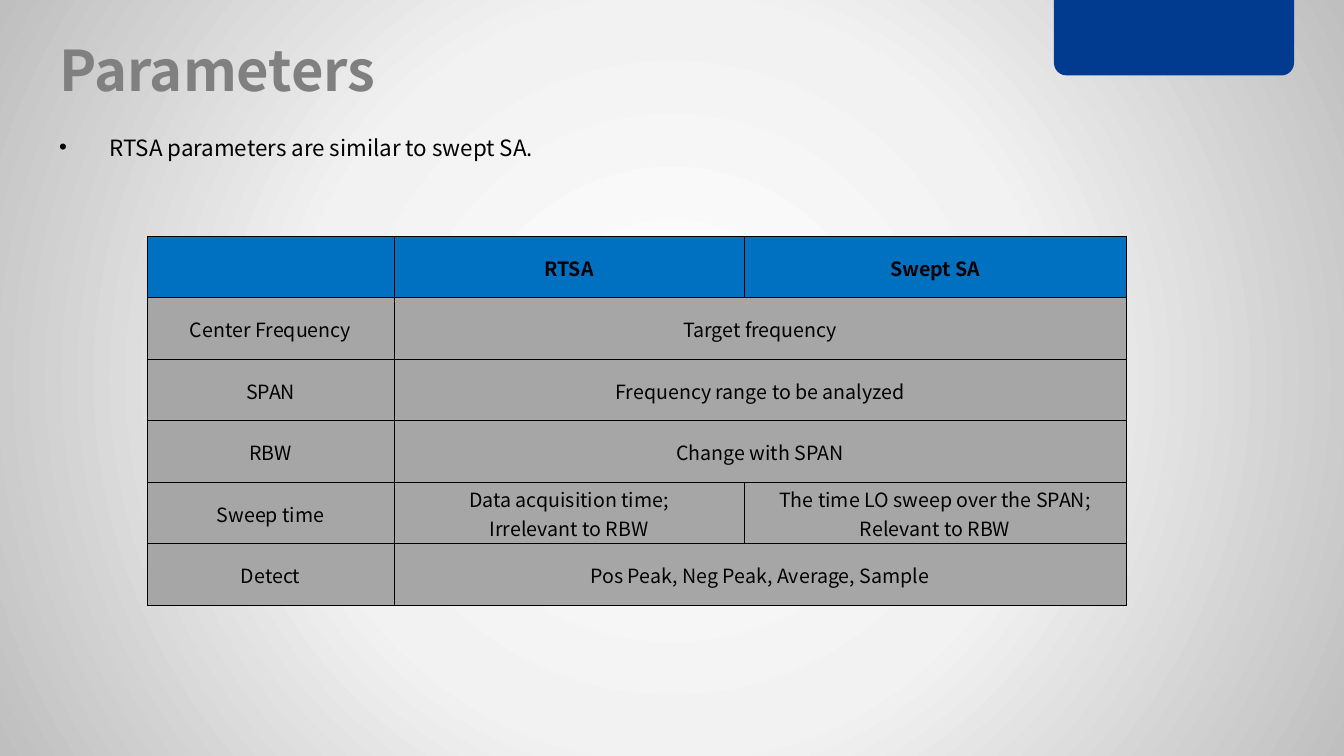
from dataclasses import dataclass

from lxml.etree import SubElement
from pptx import Presentation
from pptx.dml.color import RGBColor
from pptx.enum.shapes import MSO_SHAPE as Shape
from pptx.enum.text import MSO_ANCHOR as Anchor, MSO_AUTO_SIZE as AutoSize, PP_ALIGN as Align
from pptx.oxml import parse_xml
from pptx.oxml.ns import nsdecls, qn
from pptx.slide import Slide
from pptx.table import _Cell as Cell
from pptx.text.text import _Paragraph as Paragraph
from pptx.util import Cm, Pt

FONT = "Noto Sans CJK SC"
BLACK = RGBColor(0x00, 0x00, 0x00)
TITLE_GRAY = RGBColor(0x80, 0x80, 0x80)
TAB_BLUE = RGBColor(0x00, 0x3B, 0x90)
HEADER_BLUE = RGBColor(0x00, 0x70, 0xC0)
CELL_GRAY = RGBColor(0xA6, 0xA6, 0xA6)
BACKDROP_STOPS = (
    (0, RGBColor(0xFF, 0xFF, 0xFF)),
    (48, RGBColor(0xF2, 0xF2, 0xF2)),
    (100, RGBColor(0xBF, 0xBF, 0xBF)),
)
SLIDE_WIDTH, SLIDE_HEIGHT = Cm(33.87), Cm(19.05)
COLUMN_WIDTHS = (Cm(6.22), Cm(8.82), Cm(9.63))
ROW_HEIGHT = Cm(1.55)


@dataclass(frozen=True)
class Parameter:
    name: str
    rtsa: str
    swept: str | None = None
    header: bool = False


PARAMETERS = (
    Parameter("", "RTSA", "Swept SA", header=True),
    Parameter("Center Frequency", "Target frequency"),
    Parameter("SPAN", "Frequency range to be analyzed"),
    Parameter("RBW", "Change with SPAN"),
    Parameter(
        "Sweep time",
        "Data acquisition time;\nIrrelevant to RBW",
        "The time LO sweep over the SPAN;\nRelevant to RBW",
    ),
    Parameter("Detect", "Pos Peak, Neg Peak, Average, Sample"),
)


def add_text(paragraph: Paragraph, text: str, size: int, color: RGBColor, bold: bool = False) -> None:
    run = paragraph.add_run()
    run.text = text
    run.font.name = FONT
    run.font.size = Pt(size)
    run.font.bold = bold
    run.font.color.rgb = color


def draw_backdrop(slide: Slide) -> None:
    backdrop = slide.shapes.add_shape(Shape.RECTANGLE, 0, 0, SLIDE_WIDTH, SLIDE_HEIGHT)
    backdrop.shadow.inherit = False
    backdrop.line.fill.background()
    backdrop.fill.background()
    stops = "".join(
        f'<a:gs pos="{percent * 1000}"><a:srgbClr val="{color}"/></a:gs>'
        for percent, color in BACKDROP_STOPS
    )
    gradient = parse_xml(
        f'<a:gradFill {nsdecls("a")} rotWithShape="1"><a:gsLst>{stops}</a:gsLst>'
        '<a:path path="circle"><a:fillToRect l="50000" t="50000" r="50000" b="50000"/>'
        "</a:path></a:gradFill>"
    )
    properties = backdrop.element.spPr
    properties.replace(properties.find(qn("a:noFill")), gradient)
    backdrop.element.getparent().insert(2, backdrop.element)


def draw_corner_tab(slide: Slide) -> None:
    tab = slide.shapes.add_shape(
        Shape.ROUND_2_SAME_RECTANGLE, Cm(26.56), 0, Cm(6.05), Cm(1.9)
    )
    tab.rotation = 180
    tab.shadow.inherit = False
    tab.fill.solid()
    tab.fill.fore_color.rgb = TAB_BLUE
    tab.line.fill.background()


def write_title(slide: Slide) -> None:
    title = slide.shapes.title
    title.left, title.top, title.width, title.height = Cm(1.24), Cm(0.76), Cm(18.2), Cm(1.96)
    frame = title.text_frame
    frame.auto_size = AutoSize.NONE
    frame.vertical_anchor = Anchor.MIDDLE
    heading = frame.paragraphs[0]
    heading.alignment = Align.LEFT
    add_text(heading, "Parameters", 40, TITLE_GRAY, bold=True)


def write_summary(slide: Slide) -> None:
    frame = slide.shapes.add_textbox(Cm(1.24), Cm(3.25), Cm(30.9), Cm(2.06)).text_frame
    frame.word_wrap = True
    summary = frame.paragraphs[0]
    properties = summary._p.get_or_add_pPr()
    properties.set("marL", str(Cm(1.27)))
    properties.set("indent", str(-Cm(1.27)))
    SubElement(properties, qn("a:buFont")).set("typeface", "Arial")
    SubElement(properties, qn("a:buChar")).set("char", "•")
    add_text(summary, "RTSA parameters are similar to swept SA.", 16, BLACK)


def style_cell(cell: Cell, fill: RGBColor) -> None:
    cell.fill.solid()
    cell.fill.fore_color.rgb = fill
    cell.vertical_anchor = Anchor.MIDDLE
    cell.margin_left = cell.margin_right = cell.margin_top = Cm(0.03)
    cell.margin_bottom = 0
    for position, side in enumerate("LRTB"):
        border = parse_xml(
            f'<a:ln{side} {nsdecls("a")} w="{Pt(0.5)}"><a:solidFill>'
            f'<a:srgbClr val="{BLACK}"/></a:solidFill></a:ln{side}>'
        )
        cell._tc.tcPr.insert(position, border)


def write_cell(cell: Cell, text: str, bold: bool) -> None:
    frame = cell.text_frame
    for index, line in enumerate(text.splitlines()):
        paragraph = frame.add_paragraph() if index else frame.paragraphs[0]
        paragraph.alignment = Align.CENTER
        add_text(paragraph, line, 14, BLACK, bold)


def draw_parameter_table(slide: Slide) -> None:
    table = slide.shapes.add_table(
        len(PARAMETERS), len(COLUMN_WIDTHS), Cm(3.71), Cm(5.95),
        sum(COLUMN_WIDTHS), ROW_HEIGHT * len(PARAMETERS),
    ).table
    for column, width in zip(table.columns, COLUMN_WIDTHS):
        column.width = width
    for row, parameter in enumerate(PARAMETERS):
        table.rows[row].height = ROW_HEIGHT
        for cell in table.rows[row].cells:
            style_cell(cell, HEADER_BLUE if parameter.header else CELL_GRAY)
        if parameter.swept is None:
            table.cell(row, 1).merge(table.cell(row, 2))
        for column, text in enumerate((parameter.name, parameter.rtsa, parameter.swept)):
            if text:
                write_cell(table.cell(row, column), text, parameter.header)


def main() -> None:
    presentation = Presentation()
    presentation.slide_width, presentation.slide_height = SLIDE_WIDTH, SLIDE_HEIGHT
    slide = presentation.slides.add_slide(presentation.slide_layouts.get_by_name("Title Only"))
    draw_backdrop(slide)
    draw_corner_tab(slide)
    write_title(slide)
    draw_parameter_table(slide)
    write_summary(slide)
    presentation.save("out.pptx")


if __name__ == "__main__":
    main()
